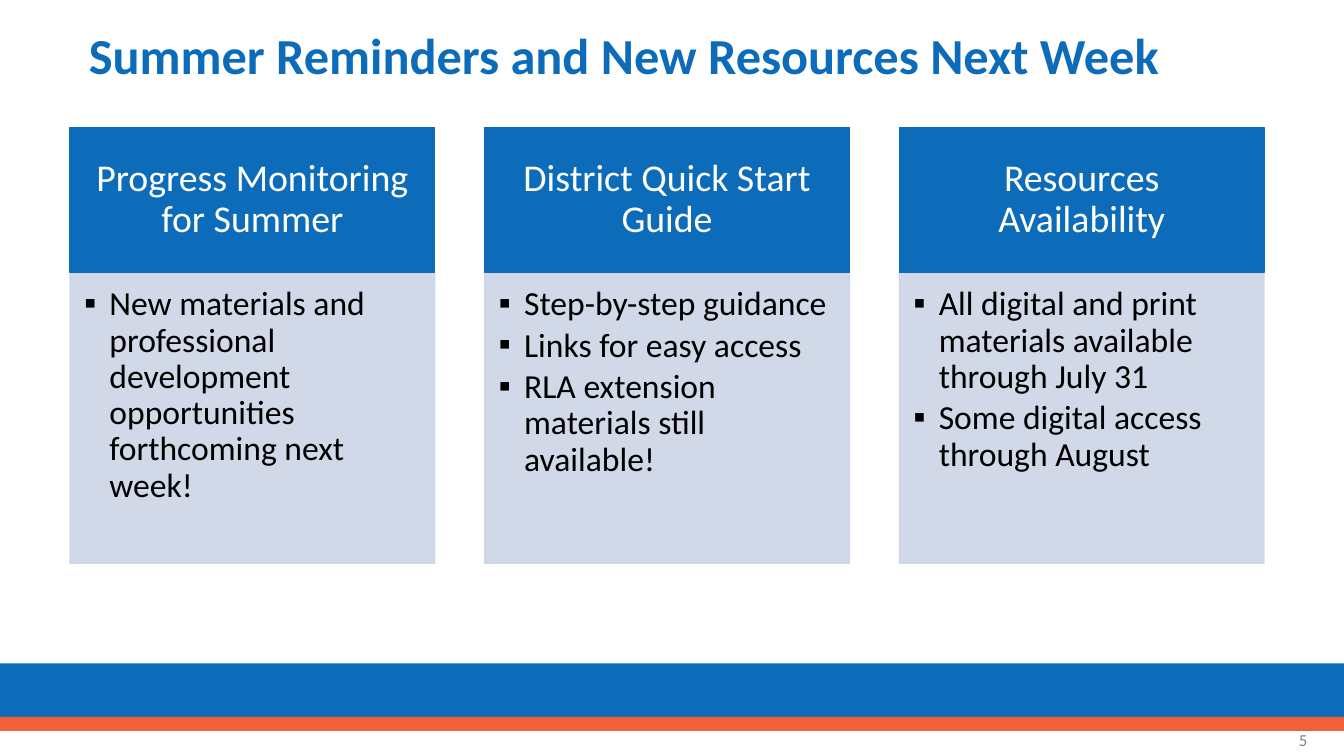
from dataclasses import dataclass

import pptx
import pptx.dml.color
import pptx.enum.shapes
import pptx.enum.text
import pptx.oxml
import pptx.oxml.ns
import pptx.util
from pptx.util import Pt

Align = pptx.enum.text.PP_ALIGN
Anchor = pptx.enum.text.MSO_ANCHOR


@dataclass(frozen=True)
class Theme:
    font: str = "Calibri"
    blue: str = "0D6CB9"
    orange: str = "F16038"
    panel: str = "CCD4E6"
    white: str = "FFFFFF"
    black: str = "000000"
    gray: str = "808080"
    title_size: float = 36
    heading_size: float = 27
    list_size: float = 24
    number_size: float = 12
    panel_opacity: int = 90


@dataclass(frozen=True)
class Box:
    left: float
    top: float
    width: float
    height: float

    def lengths(self) -> tuple:
        return Pt(self.left), Pt(self.top), Pt(self.width), Pt(self.height)


@dataclass(frozen=True)
class Topic:
    heading: str
    points: tuple[str, ...]


THEME = Theme()
SLIDE_WIDTH, SLIDE_HEIGHT = 960, 540
TITLE_BOX = Box(56.2, 12.2, 875.5, 59)
NUMBER_BOX = Box(725, 514, 216, 28.8)
BANDS = (
    (Box(0, 473.8, SLIDE_WIDTH, 41.8), THEME.blue),
    (Box(0, 512, SLIDE_WIDTH, 10), THEME.orange),
)
COLUMN_LEFT, COLUMN_STEP, COLUMN_WIDTH = 50.1, 296.2, 260.4
HEADING_TOP, HEADING_HEIGHT, PANEL_HEIGHT = 90.9, 103.9, 207.5
COMPARISON_LAYOUT = 4  # a title and four body placeholders

TOPICS = (
    Topic("Progress Monitoring for Summer", (
        "New materials and professional development opportunities "
        "forthcoming next week!",
    )),
    Topic("District Quick Start Guide", (
        "Step-by-step guidance",
        "Links for easy access",
        "RLA extension materials still available!",
    )),
    Topic("Resources Availability", (
        "All digital and print materials available through July 31",
        "Some digital access through August",
    )),
)


def rgb(color: str) -> pptx.dml.color.RGBColor:
    return pptx.dml.color.RGBColor.from_string(color)


def place(shape, box: Box) -> None:
    shape.left, shape.top, shape.width, shape.height = box.lengths()


def paint(shape, color: str, outlined: bool) -> None:
    shape.fill.solid()
    shape.fill.fore_color.rgb = rgb(color)
    if outlined:
        shape.line.color.rgb = rgb(color)
        shape.line.width = Pt(1)
    else:
        shape.line.fill.background()


def set_opacity(shape, percent: int) -> None:
    """Make the fill and the outline of a painted shape translucent."""
    properties = shape.fill._xPr
    for color in properties.iter(pptx.oxml.ns.qn("a:srgbClr")):
        color.append(pptx.oxml.parse_xml(
            f'<a:alpha {pptx.oxml.ns.nsdecls("a")} val="{percent * 1000}"/>'))


def add_bar(slide, box: Box, color: str, outlined: bool = False):
    bar = slide.shapes.add_shape(
        pptx.enum.shapes.MSO_SHAPE.RECTANGLE, *box.lengths())
    bar.shadow.inherit = False
    paint(bar, color, outlined)
    return bar


def set_frame(frame, anchor, insets: tuple = (7.2, 3.6, 7.2, 3.6)) -> None:
    frame.word_wrap = True
    frame.auto_size = pptx.enum.text.MSO_AUTO_SIZE.NONE
    frame.vertical_anchor = anchor
    (frame.margin_left, frame.margin_top,
     frame.margin_right, frame.margin_bottom) = map(Pt, insets)


def format_paragraph(paragraph, size: float, color: str, align,
                     bold: bool = False, spacing: float = 0.9) -> None:
    paragraph.alignment = align
    paragraph.line_spacing = spacing
    paragraph.space_before = Pt(0)
    paragraph.font.name = THEME.font
    paragraph.font.size = Pt(size)
    paragraph.font.bold = bold
    paragraph.font.color.rgb = rgb(color)


def add_bullet(paragraph) -> None:
    properties = paragraph._p.get_or_add_pPr()
    properties.set("marL", str(Pt(18)))
    properties.set("indent", str(Pt(-18)))
    namespace = pptx.oxml.ns.nsdecls("a")
    for bullet in (f'<a:buFont {namespace} typeface="{THEME.font}"/>',
                   f'<a:buChar {namespace} char="▪"/>'):
        properties.append(pptx.oxml.parse_xml(bullet))


def fill_title(title) -> None:
    place(title, TITLE_BOX)
    title.text_frame.text = "Summer Reminders and New Resources Next Week"
    set_frame(title.text_frame, Anchor.MIDDLE)
    format_paragraph(title.text_frame.paragraphs[0], THEME.title_size,
                     THEME.blue, Align.LEFT, bold=True)


def add_topic(slide, panel, topic: Topic, left: float) -> None:
    """Draw a heading and fill the body placeholder under it."""
    heading = add_bar(
        slide, Box(left, HEADING_TOP, COLUMN_WIDTH, HEADING_HEIGHT),
        THEME.blue, outlined=True)
    heading.text_frame.text = topic.heading
    set_frame(heading.text_frame, Anchor.MIDDLE, (15.1, 8.6, 15.1, 8.6))
    format_paragraph(heading.text_frame.paragraphs[0], THEME.heading_size,
                     THEME.white, Align.CENTER)

    place(panel, Box(left, HEADING_TOP + HEADING_HEIGHT,
                     COLUMN_WIDTH, PANEL_HEIGHT))
    paint(panel, THEME.panel, outlined=True)
    set_opacity(panel, THEME.panel_opacity)
    panel.text_frame.text = "\n".join(topic.points)
    set_frame(panel.text_frame, Anchor.TOP, (10.1, 10.1, 13.7, 15.1))
    for point in panel.text_frame.paragraphs:
        add_bullet(point)
        format_paragraph(point, THEME.list_size, THEME.black, Align.LEFT)
        point.space_after = Pt(3.6)


def add_slide_number(slide, number: str) -> None:
    frame = slide.shapes.add_textbox(*NUMBER_BOX.lengths()).text_frame
    frame.text = number
    set_frame(frame, Anchor.MIDDLE)
    format_paragraph(frame.paragraphs[0], THEME.number_size, THEME.gray,
                     Align.RIGHT, spacing=1.0)


def main() -> None:
    presentation = pptx.Presentation()
    presentation.slide_width = Pt(SLIDE_WIDTH)
    presentation.slide_height = Pt(SLIDE_HEIGHT)
    slide = presentation.slides.add_slide(
        presentation.slide_layouts[COMPARISON_LAYOUT])
    title, *panels = slide.placeholders

    for box, color in BANDS:
        add_bar(slide, box, color)
    fill_title(title)
    for column, (topic, panel) in enumerate(zip(TOPICS, panels)):
        add_topic(slide, panel, topic, COLUMN_LEFT + column * COLUMN_STEP)
    for unused in panels[len(TOPICS):]:
        unused.element.getparent().remove(unused.element)
    add_slide_number(slide, "5")
    presentation.save("out.pptx")


if __name__ == "__main__":
    main()
